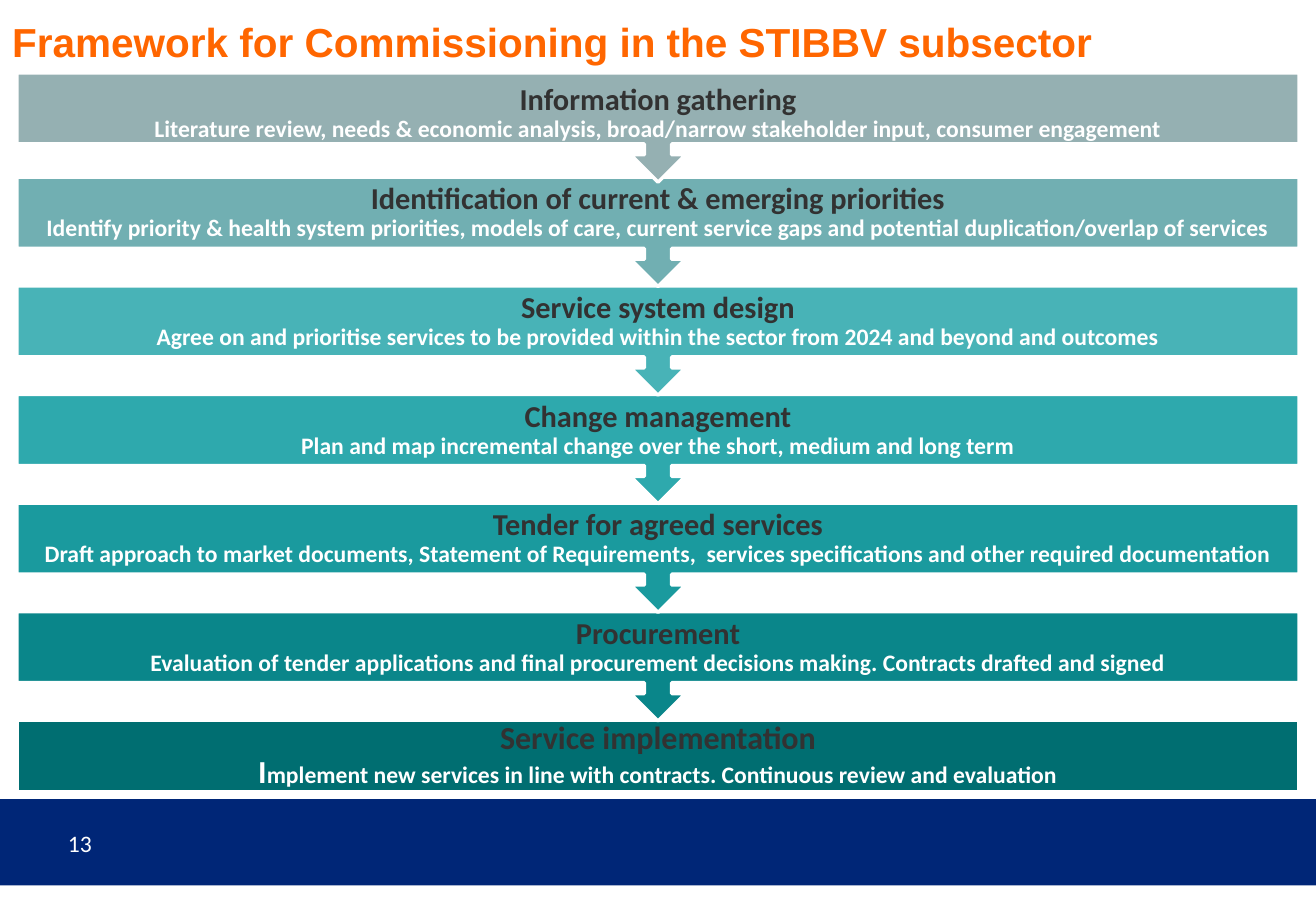
from pptx import Presentation
from pptx.dml.color import RGBColor
from pptx.enum.shapes import MSO_SHAPE
from pptx.enum.text import MSO_ANCHOR, PP_ALIGN
from pptx.util import Inches, Pt

RECT, CALLOUT = MSO_SHAPE.RECTANGLE, MSO_SHAPE.DOWN_ARROW_CALLOUT
MIDDLE, BOTTOM = MSO_ANCHOR.MIDDLE, MSO_ANCHOR.BOTTOM
LEFT, CENTER = PP_ALIGN.LEFT, PP_ALIGN.CENTER

TITLE = "Framework for Commissioning in the STIBBV subsector"
PAGE = "13"
STEPS = [
    ("Information gathering",
     "Literature review, needs & economic analysis, broad/narrow stakeholder input, consumer engagement"),
    ("Identification of current & emerging priorities",
     "Identify priority & health system priorities, models of care, current service gaps and potential duplication/overlap of services"),
    ("Service system design",
     "Agree on and prioritise services to be provided within the sector from 2024 and beyond and outcomes"),
    ("Change management",
     "Plan and map incremental change over the short, medium and long term"),
    ("Tender for agreed services",
     "Draft approach to market documents, Statement of Requirements,  services specifications and other required documentation"),
    ("Procurement",
     "Evaluation of tender applications and final procurement decisions making. Contracts drafted and signed"),
    ("Service implementation",
     "Implement new services in line with contracts. Continuous review and evaluation"),
]

THEME = {
    "title": "FF6600", "heading": "323232", "light": "FFFFFF", "band": "002677",
    "steps": ["95B0B2", "71AFB2", "48B3B7", "2EA9AD", "1A9A9E", "0A868A", "006E71"],
    "title_font": "Arial", "body_font": "Calibri",
    "title_size": 24, "heading_size": 18, "last_size": 19, "detail_size": 14,
}

W, H = 10.83, 7.5
MARGIN = 0.14
FIRST_TOP, SECOND_TOP, PITCH = 0.6, 1.46, 0.894
BAR_H, CALLOUT_H = 0.59, 0.9


def color(name):
    return RGBColor.from_string(THEME.get(name, name))


def set_font(font, size, name, face="body_font", bold=False):
    font.size, font.bold, font.name = Pt(size), bold, THEME[face]
    font.color.rgb = color(name)


def set_frame(tf, anchor, left=0.1, top=0.05, right=0.1, bottom=0.05):
    tf.word_wrap, tf.vertical_anchor = True, anchor
    tf.margin_left, tf.margin_top = Inches(left), Inches(top)
    tf.margin_right, tf.margin_bottom = Inches(right), Inches(bottom)


def place(sp, *box):
    sp.left, sp.top, sp.width, sp.height = map(Inches, box)


def add_block(s, kind, box, fill):
    sp = s.shapes.add_shape(kind, *map(Inches, box))
    sp.shadow.inherit = False
    sp.fill.solid()
    sp.fill.fore_color.rgb = color(fill)
    return sp


def add_run(p, text, size, name):
    r = p.add_run()
    r.text = text
    r.font.size = Pt(size)
    r.font.color.rgb = color(name)


def add_step(s, i):
    heading, detail = STEPS[i]
    first, last = i == 0, i == len(STEPS) - 1
    top = FIRST_TOP if first else SECOND_TOP + (i - 1) * PITCH
    kind, height = (RECT, BAR_H) if last else (CALLOUT, CALLOUT_H)
    sp = add_block(s, kind, (MARGIN, top, W - 2 * MARGIN, height), THEME["steps"][i])
    sp.line.color.rgb = color("light")
    sp.line.width = Pt(2)

    tf = sp.text_frame
    set_frame(tf, MIDDLE, 0.14, 0.09 if first else 0, 0.14, 0)
    p = tf.paragraphs[0]
    p.alignment, p.line_spacing = CENTER, 0.9
    p.font.name, p.font.bold = THEME["body_font"], True
    size = THEME["last_size"] if last else THEME["heading_size"]
    add_run(p, heading, size, "heading")
    p.add_line_break()
    if last:
        add_run(p, detail[0], size, "light")
        detail = detail[1:]
    add_run(p, detail, THEME["detail_size"], "light")


def main():
    prs = Presentation()
    prs.slide_width, prs.slide_height = Inches(W), Inches(H)
    s = prs.slides.add_slide(prs.slide_layouts[5])

    title = s.shapes.title
    place(title, 0, 0, 0.9 * W, 0.97)
    set_frame(title.text_frame, BOTTOM, bottom=0.43)
    p = title.text_frame.paragraphs[0]
    p.text, p.alignment = TITLE, LEFT
    set_font(p.font, THEME["title_size"], "title", "title_font", True)

    band = add_block(s, RECT, (0, 6.58, W, 0.71), "band")
    band.line.fill.background()

    page = s.shapes.add_textbox(*map(Inches, (0.46, 6.74, 3, 0.4)))
    set_frame(page.text_frame, MIDDLE)
    p = page.text_frame.paragraphs[0]
    p.text = PAGE
    set_font(p.font, THEME["detail_size"], "light")

    for i in reversed(range(len(STEPS))):
        add_step(s, i)

    prs.save("out.pptx")


if __name__ == "__main__":
    main()
